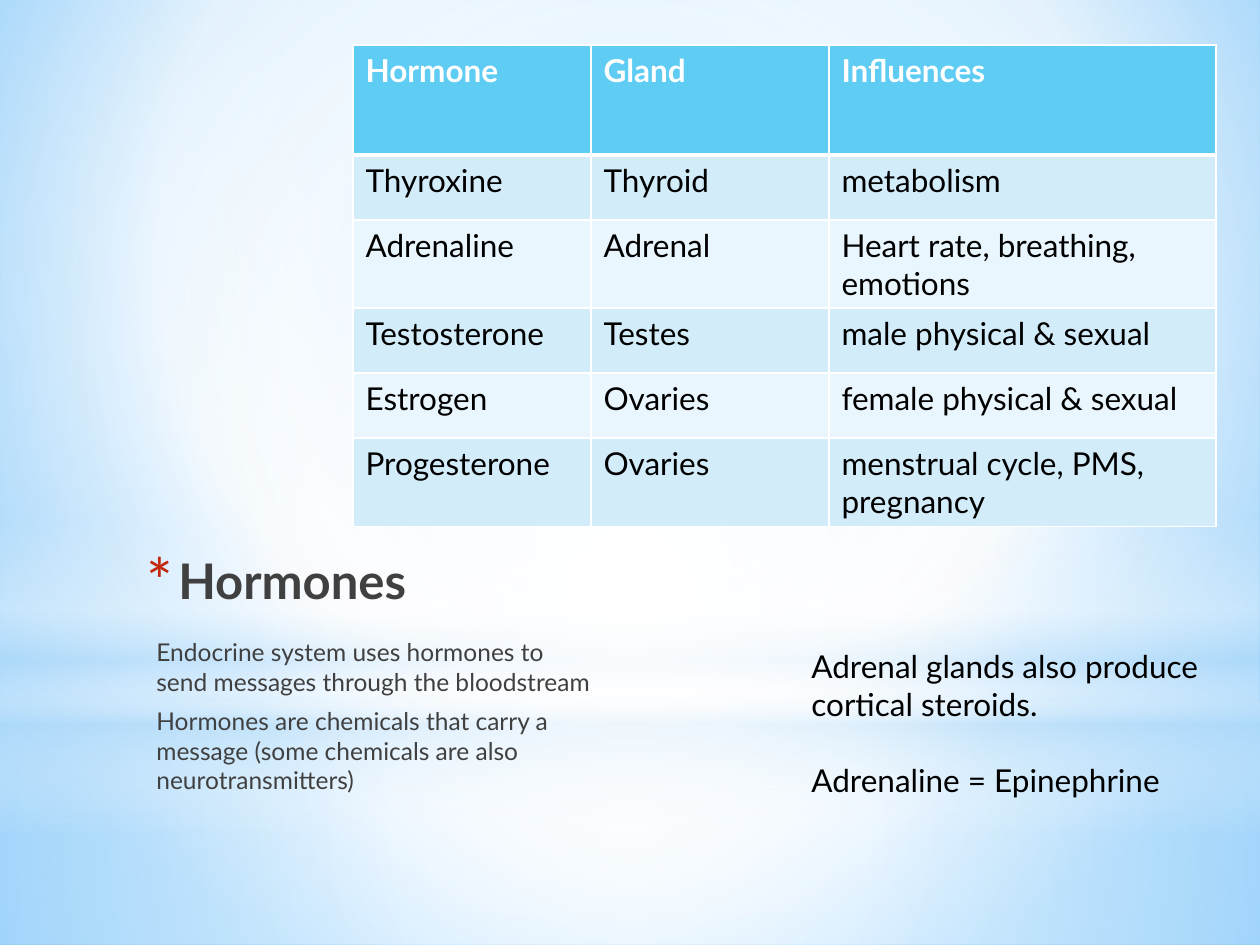
from dataclasses import dataclass

from pptx import Presentation
from pptx import util as u
from pptx.dml.color import RGBColor
from pptx.enum import shapes, text
from pptx.oxml import parse_xml
from pptx.oxml.ns import nsdecls, qn

PX = 914400 / 126


def px(length):
    return u.Emu(round(length * PX))


@dataclass(frozen=True)
class Theme:
    font: str = "Lato"
    title_size: int = 28
    body_size: int = 14
    text_size: int = 18
    white: str = "FFFFFF"
    black: str = "000000"
    grey: str = "404040"
    red: str = "C3260C"
    haze: str = "B4DCFA"
    sky: str = "9ED5FF"
    deep_sky: str = "5BB9FF"
    header: str = "5ECCF3"
    bands: tuple = ("D2ECFA", "EAF6FD")


class SlideBuilder:
    def __init__(self, page, theme):
        self.page = page
        self.theme = theme

    def gradient(self, fill, owner, stops, centre=None):
        """Stops are (position, colour, opacity); no centre means top to bottom."""
        fill.gradient()
        old = next(owner.iter(qn("a:gradFill")))
        marks = "".join(
            f'<a:gs pos="{pos * 1000}"><a:srgbClr val="{colour}">'
            f'<a:alpha val="{opacity * 1000}"/></a:srgbClr></a:gs>'
            for pos, colour, opacity in stops)
        if centre:
            sides = " ".join(f'{side}="{value * 1000}"' for side, value in zip("ltrb", centre))
            course = f'<a:path path="circle"><a:fillToRect {sides}/></a:path>'
        else:
            course = '<a:lin ang="5400000" scaled="0"/>'
        old.getparent().replace(old, parse_xml(
            f'<a:gradFill rotWithShape="1" {nsdecls("a")}>'
            f'<a:gsLst>{marks}</a:gsLst>{course}</a:gradFill>'))

    def background(self, stops, centre):
        self.gradient(self.page.background.fill, self.page.element, stops, centre)

    def glow(self, kind, area, stops, centre=None):
        shape = self.page.shapes.add_shape(kind, *map(px, area))
        shape.shadow.inherit = False
        shape.line.fill.background()
        self.gradient(shape.fill, shape.element, stops, centre)

    def add_words(self, para, words, size, colour, bold=False, **spacing):
        span = para.add_run()
        span.text = words
        formats = {"name": self.theme.font, "size": u.Pt(size), "bold": bold}
        for name, value in formats.items():
            setattr(span.font, name, value)
        span.font.color.rgb = RGBColor.from_string(colour)
        for name, points in spacing.items():
            setattr(para, name, u.Pt(points))

    def text_box(self, area, lines, size, colour, bold=False,
                 anchor=text.MSO_ANCHOR.TOP, **spacing):
        """Lines are (words, extra spacing) pairs."""
        frame = self.page.shapes.add_textbox(*map(px, area)).text_frame
        frame.word_wrap = True
        frame.vertical_anchor = anchor
        for index, (words, extra) in enumerate(lines):
            para = frame.add_paragraph() if index else frame.paragraphs[0]
            self.add_words(para, words, size, colour, bold, **{**spacing, **extra})
        return frame

    def bullet(self, para, sign, colour, percent, indent):
        props = para._p.get_or_add_pPr()
        props.set("marL", str(px(indent)))
        props.set("indent", str(-px(indent)))
        for tag in (f'<a:buClr {nsdecls("a")}><a:srgbClr val="{colour}"/></a:buClr>',
                    f'<a:buSzPct {nsdecls("a")} val="{percent * 1000}"/>',
                    f'<a:buFont {nsdecls("a")} typeface="{self.theme.font}"/>',
                    f'<a:buChar {nsdecls("a")} char="{sign}"/>'):
            props.append(parse_xml(tag))

    def borders(self, cell, **widths):
        props = cell._tc.get_or_add_tcPr()
        for index, side in enumerate("LRTB"):
            width = u.Pt(widths.get(side, 1))
            props.insert(index, parse_xml(
                f'<a:ln{side} {nsdecls("a")} w="{width}"><a:solidFill>'
                f'<a:srgbClr val="{self.theme.white}"/></a:solidFill></a:ln{side}>'))

    def table(self, left, top, widths, heights, rows):
        theme = self.theme
        area = (left, top, sum(widths), sum(heights))
        grid = self.page.shapes.add_table(len(rows), len(widths), *map(px, area)).table
        for column, width in zip(grid.columns, widths):
            column.width = px(width)
        for r, (row, height) in enumerate(zip(rows, heights)):
            grid.rows[r].height = px(height)
            is_header = r == 0
            fill = theme.header if is_header else theme.bands[(r - 1) % 2]
            for c, words in enumerate(row):
                cell = grid.cell(r, c)
                cell.fill.solid()
                cell.fill.fore_color.rgb = RGBColor.from_string(fill)
                self.borders(cell, T=3 if r == 1 else 1, B=3 if is_header else 1)
                self.add_words(cell.text_frame.paragraphs[0], words, theme.text_size,
                               theme.white if is_header else theme.black, is_header)


def main():
    theme = Theme()
    deck = Presentation()
    deck.slide_width, deck.slide_height = px(1260), px(945)
    slide = SlideBuilder(deck.slides.add_slide(deck.slide_layouts[6]), theme)
    rect, oval = shapes.MSO_SHAPE.RECTANGLE, shapes.MSO_SHAPE.OVAL
    white, haze = theme.white, theme.haze
    middle = (50, 50, 50, 50)

    # Sky background with layers of light
    slide.background([(0, theme.sky, 100), (60, white, 100), (100, theme.deep_sky, 100)],
                     (20, 10, 20, 60))
    slide.glow(rect, (0, 703, 1260, 242),
               [(0, white, 91), (37, white, 76), (100, haze, 79)], middle)
    slide.glow(rect, (0, 0, 1260, 703),
               [(0, white, 89), (48, white, 62), (100, haze, 79)], middle)
    slide.glow(rect, (0, 519, 1260, 315),
               [(0, white, 0), (29, white, 30), (45, haze, 40),
                (55, white, 26), (65, haze, 60), (100, white, 0)])
    slide.glow(oval, (0, 220, 1260, 703), [(0, white, 100), (56, white, 0)], middle)

    # Title
    title = slide.text_box((134, 532, 406, 84), [("Hormones", {})], theme.title_size,
                           theme.grey, bold=True, anchor=text.MSO_ANCHOR.BOTTOM)
    slide.bullet(title.paragraphs[0], "*", theme.red, percent=128, indent=32)

    # Explanation
    slide.text_box((144, 631, 467, 189), [
        ("Endocrine system uses hormones to send messages through the bloodstream", {}),
        ("Hormones are chemicals that carry a message "
         "(some chemicals are also neurotransmitters)", {}),
    ], theme.body_size, theme.grey, space_before=2.8, space_after=3)

    # Hormone table
    slide.table(353, 45, (238, 238, 387), (110, *[65] * 5), [
        ("Hormone", "Gland", "Influences"),
        ("Thyroxine", "Thyroid", "metabolism"),
        ("Adrenaline", "Adrenal", "Heart rate, breathing, emotions"),
        ("Testosterone", "Testes", "male physical & sexual"),
        ("Estrogen", "Ovaries", "female physical & sexual"),
        ("Progesterone", "Ovaries", "menstrual cycle, PMS, pregnancy"),
    ])

    # Side note
    slide.text_box((799, 641, 425, 165), [
        ("Adrenal glands also produce", {}),
        ("cortical steroids.", {"space_after": 21.6}),
        ("Adrenaline = Epinephrine", {}),
    ], theme.text_size, theme.black)

    deck.save("out.pptx")


if __name__ == "__main__":
    main()
